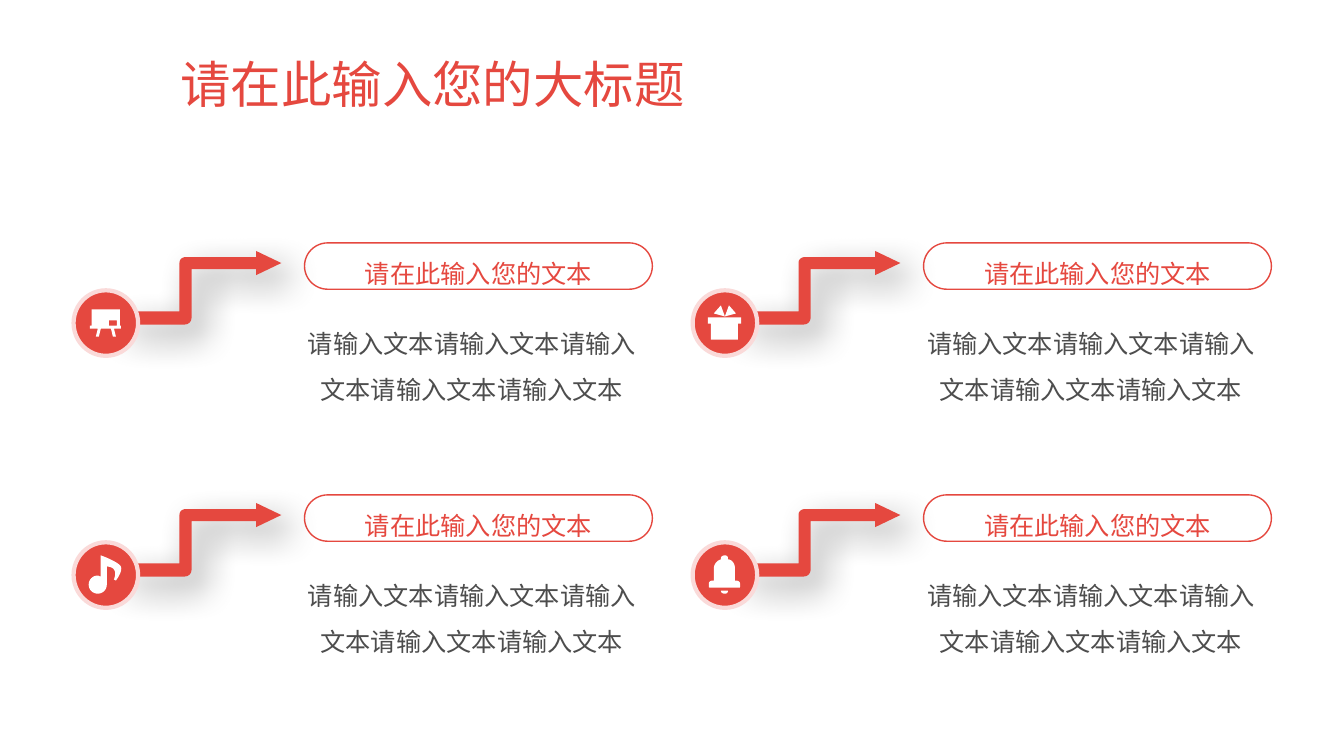
from lxml import etree
from pptx import Presentation
from pptx.dml.color import RGBColor
from pptx.enum import shapes, text
from pptx.oxml import ns
from pptx import util as u

PX = 9144
RED = RGBColor(0xE5, 0x48, 0x3F)
PINK = RGBColor(0xFA, 0xDA, 0xD9)
WHITE = RGBColor(0xFF, 0xFF, 0xFF)
GREY = RGBColor(0x4D, 0x4D, 0x4D)
FONT = "Noto Sans CJK SC"

TITLE = "请在此输入您的大标题"
HEADING = "请在此输入您的文本"
BODY = "请输入文本" * 5

LEFT, TOP = 73, 288
COLUMN_STEP, ROW_STEP = 614, 250
CURVE_STEPS = 8

ARROW = [[(206, -27), (181, -15), (181, -21), (117, -21), (117, 27),
          (117, 31, 114, 34, 110, 34), (44, 34), (44, 21), (105, 21),
          (105, -27), (105, -31, 108, -33, 112, -33), (181, -33), (181, -39)]]
EASEL = [[(47, 35), (46, 35), (46, 19), (18, 19), (18, 35), (16, 35),
          (16, 38), (24, 38), (22, 46), (25, 46), (27, 38), (37, 38),
          (39, 46), (42, 46), (40, 38), (47, 38)],
         [(43, 35), (35, 35), (35, 30), (43, 30)]]
GIFT = [[(28, 15), (21, 23), (32, 26)],
        [(15, 27), (15, 33), (18, 33), (18, 49), (45, 49), (45, 33),
         (48, 33), (48, 27)],
        [(36, 15), (32, 26), (43, 23)]]
NOTE = [[(24, 33), (25, 33, 26, 34, 27, 34), (27, 13),
         (27, 13, 44, 19, 47, 24), (49, 29, 42, 38, 42, 38), (40, 37),
         (40, 37, 43, 30, 40, 27), (39, 25, 35, 24, 33, 24), (33, 42),
         (33, 47, 29, 51, 24, 51), (19, 51, 15, 47, 15, 42),
         (15, 37, 19, 33, 24, 33)]]
BELL = [[(28, 48), (35, 48), (35, 50, 34, 51, 32, 51),
         (30, 51, 28, 50, 28, 48)],
        [(32, 13), (34, 13, 35, 14, 35, 16), (35, 17), (36, 17),
         (40, 18, 42, 22, 42, 26), (42, 38), (43, 38),
         (45, 38, 47, 39, 47, 41), (47, 44), (47, 45, 47, 45, 46, 45),
         (17, 45), (17, 45, 16, 45, 16, 44), (16, 41),
         (16, 39, 18, 38, 20, 38), (21, 38), (21, 26),
         (21, 22, 24, 18, 28, 17), (28, 16), (28, 14, 30, 13, 32, 13)]]
ICONS = [[EASEL, GIFT], [NOTE, BELL]]


def box(*lengths):
    return [length * PX for length in lengths]


def apply(target, values):
    for name, value in values.items():
        setattr(target, name, value)


def write(sp, words, size, color, align, spacing):
    tf = sp.text_frame
    apply(tf, {"word_wrap": True, "auto_size": text.MSO_AUTO_SIZE.NONE,
               "vertical_anchor": text.MSO_ANCHOR.MIDDLE})
    p = tf.paragraphs[0]
    apply(p, {"alignment": align, "line_spacing": spacing})
    r = p.add_run()
    r.text = words
    apply(r.font, {"size": u.Pt(size), "name": FONT})
    r.font.color.rgb = color
    ea = etree.SubElement(r.font._element, ns.qn("a:ea"))
    ea.set("typeface", FONT)


def paint(sp, fill, line=None, width=0):
    sp.shadow.inherit = False
    sp.fill.solid()
    sp.fill.fore_color.rgb = fill
    if line is None:
        sp.line.fill.background()
    else:
        sp.line.color.rgb = line
        sp.line.width = u.Pt(width)


def add_preset(s, kind, place, fill, line, width):
    sp = s.shapes.add_shape(kind, *box(*place))
    paint(sp, fill, line, width)
    return sp


def flatten(outline):
    points = [outline[0]]
    for step in outline[1:]:
        if len(step) == 2:
            points.append(step)
            continue
        nodes = [points[-1], step[:2], step[2:4], step[4:]]
        for i in range(1, CURVE_STEPS + 1):
            t = i / CURVE_STEPS
            weights = ((1 - t) ** 3, 3 * t * (1 - t) ** 2,
                       3 * t ** 2 * (1 - t), t ** 3)
            points.append(tuple(sum(w * n[axis] for w, n in zip(weights, nodes))
                                for axis in (0, 1)))
    return points


def add_outline(s, x, y, outlines, color):
    contours = [[((x + px) * PX, (y + py) * PX) for px, py in flatten(outline)]
                for outline in outlines]
    builder = s.shapes.build_freeform(*contours[0][0])
    for contour in contours:
        if contour is not contours[0]:
            builder.move_to(*contour[0])
        builder.add_line_segments(contour[1:], close=True)
    sp = builder.convert_to_shape()
    paint(sp, color)
    return sp


def add_soft_shadow(sp):
    effects = sp._element.spPr.find(ns.qn("a:effectLst"))
    shadow = etree.SubElement(effects, ns.qn("a:outerShdw"), {
        "blurRad": str(u.Pt(25)), "dist": str(u.Pt(13)), "dir": "2700000",
        "algn": "tl", "rotWithShape": "0"})
    color = etree.SubElement(shadow, ns.qn("a:srgbClr"), val="000000")
    etree.SubElement(color, ns.qn("a:alpha"), val="40000")


def add_title(s):
    title = s.shapes.title
    places = box(169, 40, 1044, 93)
    apply(title, dict(zip(("left", "top", "width", "height"), places)))
    write(title, TITLE, 36, RED, text.PP_ALIGN.LEFT, 0.9)


def add_card(s, x, y, icon):
    center = text.PP_ALIGN.CENTER
    pill = add_preset(s, shapes.MSO_SHAPE.ROUNDED_RECTANGLE,
                      (x + 229, y - 47, 345, 46), WHITE, RED, 1)
    pill.adjustments[0] = 0.5
    write(pill, HEADING, 18, RED, center, 1.5)
    add_soft_shadow(add_outline(s, x, y, ARROW, RED))
    add_preset(s, shapes.MSO_SHAPE.OVAL, (x, y, 64, 65), RED, PINK, 3)
    body = s.shapes.add_textbox(*box(x + 218, y + 14, 354, 108))
    write(body, BODY, 18, GREY, center, 1.5)
    add_outline(s, x, y, icon, WHITE)


def main():
    prs = Presentation()
    prs.slide_width, prs.slide_height = box(1333, 750)
    s = prs.slides.add_slide(prs.slide_layouts[5])
    add_title(s)
    for row, icons in enumerate(ICONS):
        for column, icon in enumerate(icons):
            add_card(s, LEFT + column * COLUMN_STEP, TOP + row * ROW_STEP, icon)
    prs.save("out.pptx")


if __name__ == "__main__":
    main()
